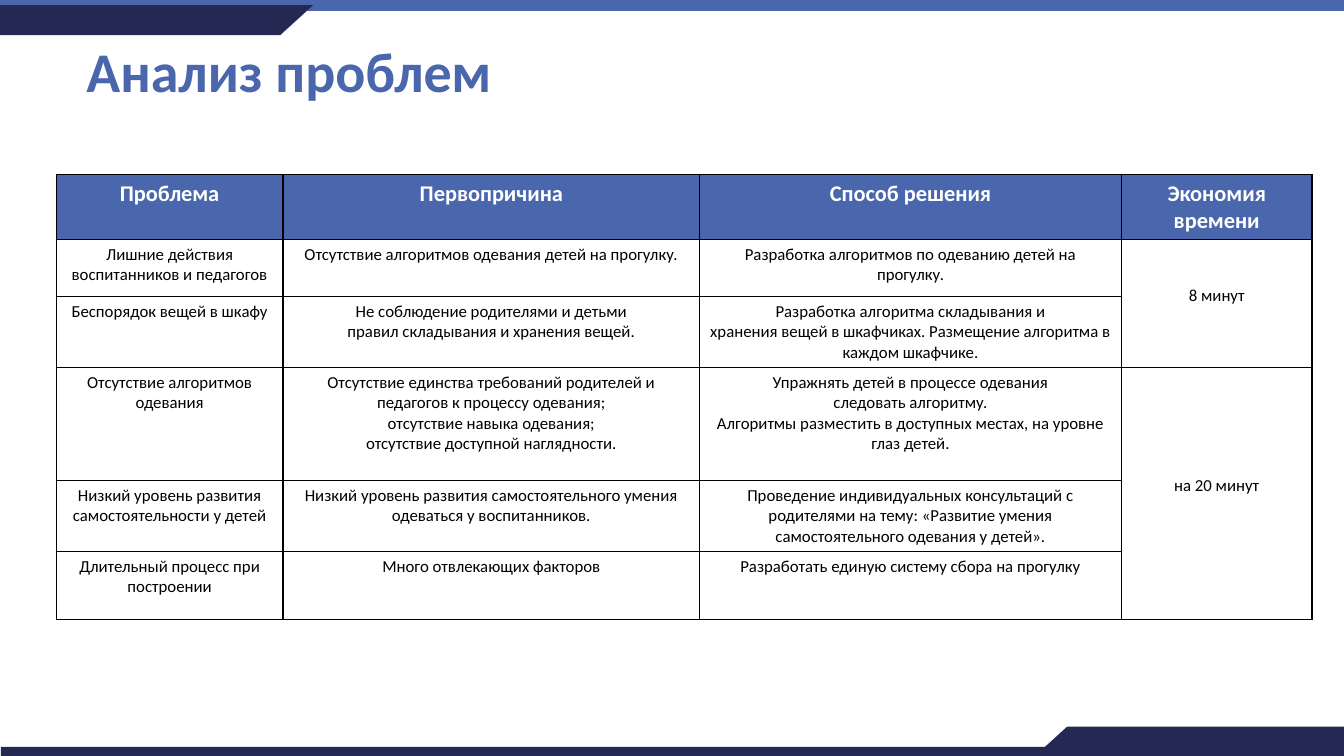
"""Builds the problem analysis slide: title, framing bars and a table with merged cells."""
from dataclasses import dataclass

import lxml.etree
import pptx
import pptx.dml.color
import pptx.enum.shapes
import pptx.enum.text
import pptx.oxml.ns
import pptx.util

Color = pptx.dml.color.RGBColor
Preset = pptx.enum.shapes.MSO_SHAPE
Anchor = pptx.enum.text.MSO_ANCHOR
Align = pptx.enum.text.PP_ALIGN

BLUE = Color(0x4A, 0x66, 0xAC)
NAVY = Color(0x24, 0x28, 0x52)
WHITE = Color(0xFF, 0xFF, 0xFF)
BLACK = Color(0x00, 0x00, 0x00)
FONT = "Calibri"

SLIDE_WIDTH = pptx.util.Inches(13.33)
SLIDE_HEIGHT = pptx.util.Inches(7.5)
GRID_COLUMNS = 160
GRID_ROWS = 90


@dataclass(frozen=True)
class Area:
    """A rectangle in grid columns and rows."""
    left: float
    top: float
    width: float
    height: float


@dataclass(frozen=True)
class Bar:
    """A filled shape of the slide frame."""
    area: Area
    color: Color
    preset: Preset = Preset.RECTANGLE
    rotation: float = 0


@dataclass(frozen=True)
class Saving:
    """Time saved, shown in a cell merged over several rows."""
    first_row: int
    last_row: int
    text: str


BARS = [
    Bar(Area(0, 0, 160, 1.3), BLUE),
    Bar(Area(0.12, 88.9, 159.88, 1.1), NAVY),
    Bar(Area(0, 0.6, 33.4, 3.6), NAVY),
    Bar(Area(29.4, 0.6, 7.9, 3.6), NAVY, Preset.FLOWCHART_MERGE),
    Bar(Area(127.1, 86.5, 32.9, 3.5), NAVY),
    Bar(Area(123.1, 86.5, 7.9, 3.6), NAVY, Preset.FLOWCHART_MERGE, 180),
]
TITLE_AREA = Area(9.1, 0.1, 138, 17.4)
TABLE_LEFT, TABLE_TOP = 6.7, 20.8
COLUMN_WIDTHS = [27, 49.6, 50.2, 22.7]
ROW_HEIGHTS = [7.7, 6.8, 8.45, 13.45, 8.45, 8.1]
HEADINGS = ["Проблема", "Первопричина", "Способ решения", "Экономия времени"]
PROBLEMS = [
    ["Лишние действия воспитанников и педагогов",
     "Отсутствие алгоритмов одевания детей на прогулку.",
     "Разработка алгоритмов по одеванию детей на прогулку."],
    ["Беспорядок вещей в шкафу",
     "Не соблюдение родителями и детьми\nправил складывания и хранения вещей.",
     "Разработка алгоритма складывания и\n"
     "хранения вещей в шкафчиках. Размещение алгоритма в каждом шкафчике."],
    ["Отсутствие алгоритмов одевания",
     "Отсутствие единства требований родителей и\nпедагогов к процессу одевания;\n"
     "отсутствие навыка одевания;\nотсутствие доступной наглядности.",
     "Упражнять детей в процессе одевания\nследовать алгоритму.\n"
     "Алгоритмы разместить в доступных местах, на уровне глаз детей."],
    ["Низкий уровень развития самостоятельности у детей",
     "Низкий уровень развития самостоятельного умения одеваться у воспитанников.",
     "Проведение индивидуальных консультаций с родителями на тему: «Развитие умения\n"
     "самостоятельного одевания у детей»."],
    ["Длительный процесс при построении",
     "Много отвлекающих факторов",
     "Разработать единую систему сбора на прогулку"],
]
SAVINGS = [Saving(1, 2, "8 минут"), Saving(3, 5, "на 20 минут")]


def across(columns: float) -> int:
    """Turn grid columns into a length."""
    return round(SLIDE_WIDTH * columns / GRID_COLUMNS)


def down(rows: float) -> int:
    """Turn grid rows into a length."""
    return round(SLIDE_HEIGHT * rows / GRID_ROWS)


def place(area: Area) -> tuple[int, int, int, int]:
    """Turn a grid area into left, top, width and height."""
    return across(area.left), down(area.top), across(area.width), down(area.height)


def style_paragraph(paragraph, size: float, color: Color, bold: bool) -> None:
    """Set the font of a whole paragraph."""
    font = paragraph.font
    font.name, font.size, font.bold = FONT, pptx.util.Pt(size), bold
    font.color.rgb = color


def draw_bar(page, bar: Bar) -> None:
    """Draw one shape of the slide frame."""
    shape = page.shapes.add_shape(bar.preset, *place(bar.area))
    shape.shadow.inherit = False
    shape.fill.solid()
    shape.fill.fore_color.rgb = bar.color
    shape.line.fill.background()
    shape.rotation = bar.rotation


def draw_title(page, text: str) -> None:
    """Draw the slide title."""
    frame = page.shapes.add_textbox(*place(TITLE_AREA)).text_frame
    frame.word_wrap = True
    frame.vertical_anchor = Anchor.MIDDLE
    frame.text = text
    frame.paragraphs[0].line_spacing = 0.9
    style_paragraph(frame.paragraphs[0], 40, BLUE, True)


def outline_cell(cell) -> None:
    """Give a cell thin black borders on all sides."""
    properties = cell._tc.get_or_add_tcPr()
    name = pptx.oxml.ns.qn
    for side in ("a:lnL", "a:lnR", "a:lnT", "a:lnB"):
        line = lxml.etree.SubElement(properties, name(side), w=str(pptx.util.Pt(1)))
        fill = lxml.etree.SubElement(line, name("a:solidFill"))
        lxml.etree.SubElement(fill, name("a:srgbClr"), val=str(BLACK))


def fill_cell(cell, text: str, size: float, color: Color, bold: bool) -> None:
    """Write centred text into a cell."""
    cell.text = text
    for paragraph in cell.text_frame.paragraphs:
        paragraph.alignment = Align.CENTER
        style_paragraph(paragraph, size, color, bold)


def draw_table(page) -> None:
    """Draw the table of problems, causes, solutions and savings."""
    area = Area(TABLE_LEFT, TABLE_TOP, sum(COLUMN_WIDTHS), sum(ROW_HEIGHTS))
    table = page.shapes.add_table(len(ROW_HEIGHTS), len(COLUMN_WIDTHS), *place(area)).table
    for column, width in zip(table.columns, COLUMN_WIDTHS):
        column.width = across(width)
    for row_number, (row, height) in enumerate(zip(table.rows, ROW_HEIGHTS)):
        row.height = down(height)
        for cell in row.cells:
            outline_cell(cell)
            cell.fill.solid()
            cell.fill.fore_color.rgb = WHITE if row_number else BLUE
            style_paragraph(cell.text_frame.paragraphs[0], 12, BLACK, False)
    for column_number, heading in enumerate(HEADINGS):
        fill_cell(table.cell(0, column_number), heading, 16, WHITE, True)
    for row_number, problem in enumerate(PROBLEMS, start=1):
        for column_number, text in enumerate(problem):
            fill_cell(table.cell(row_number, column_number), text, 12, BLACK, False)
    last_column = len(COLUMN_WIDTHS) - 1
    for saving in SAVINGS:
        cell = table.cell(saving.first_row, last_column)
        cell.merge(table.cell(saving.last_row, last_column))
        fill_cell(cell, saving.text, 12, BLACK, False)
        cell.vertical_anchor = Anchor.MIDDLE
        cell.margin_bottom = down(2.4)


def main() -> None:
    """Build and save the deck."""
    deck = pptx.Presentation()
    deck.slide_width, deck.slide_height = SLIDE_WIDTH, SLIDE_HEIGHT
    page = deck.slides.add_slide(deck.slide_layouts[6])
    for bar in BARS:
        draw_bar(page, bar)
    draw_title(page, "Анализ проблем")
    draw_table(page)
    deck.save("out.pptx")


if __name__ == "__main__":
    main()
